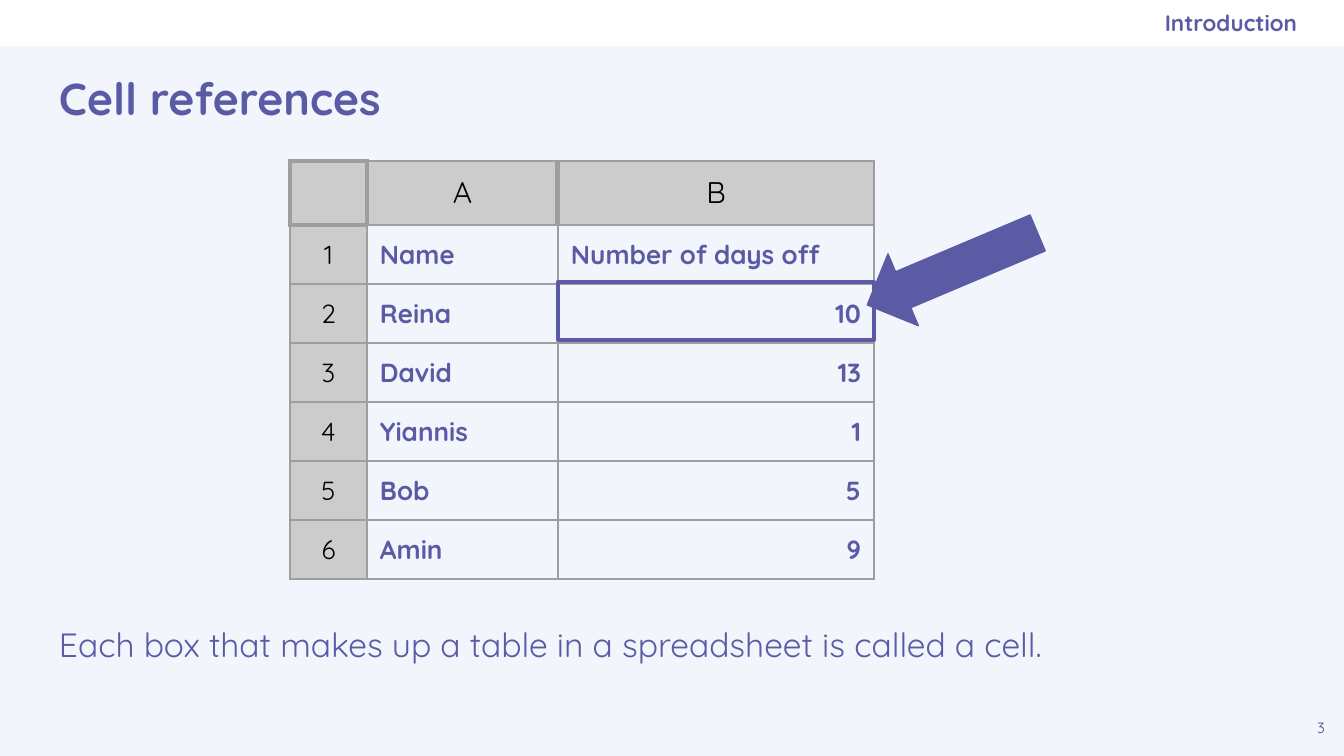
from lxml import etree
from pptx import Presentation
from pptx.dml.color import RGBColor
from pptx.enum import shapes, text
from pptx.oxml import ns
from pptx.util import Emu, Pt

PX = 914400 / 134.4
WIDTH, HEIGHT = 1344, 756

PURPLE = RGBColor(0x5B, 0x5B, 0xA5)
DARK_PURPLE = RGBColor(0x49, 0x49, 0x85)
PALE_BLUE = RGBColor(0xF2, 0xF6, 0xFC)
WHITE = RGBColor(0xFF, 0xFF, 0xFF)
BLACK = RGBColor(0, 0, 0)
HEADER_GREY = RGBColor(0xCC, 0xCC, 0xCC)
GRID_GREY = RGBColor(0x9E, 0x9E, 0x9E)

LEFT, CENTER, RIGHT = text.PP_ALIGN.LEFT, text.PP_ALIGN.CENTER, text.PP_ALIGN.RIGHT
TOP, MIDDLE = text.MSO_ANCHOR.TOP, text.MSO_ANCHOR.MIDDLE


def px(value):
    return Emu(round(value * PX))


class SlideBuilder:
    font = "Quicksand"
    inset = 13
    thin, thick = 0.75, 3

    def __init__(self, slide):
        self.slide = slide

    def background(self, color):
        fill = self.slide.background.fill
        fill.solid()
        fill.fore_color.rgb = color

    def style(self, paragraph, size, color, bold=False, align=LEFT):
        paragraph.alignment = align
        for run in paragraph.runs:
            run.font.name = self.font
            run.font.size = Pt(size)
            run.font.bold = bold
            run.font.color.rgb = color

    def margins(self, holder, inset, right=None):
        holder.margin_left = holder.margin_top = holder.margin_bottom = px(inset)
        holder.margin_right = px(inset if right is None else right)

    def label(self, box, words, size, color=PURPLE, bold=False, align=LEFT,
              anchor=TOP, right=None):
        frame = self.slide.shapes.add_textbox(*map(px, box)).text_frame
        frame.word_wrap = True
        frame.vertical_anchor = anchor
        self.margins(frame, self.inset, right)
        frame.text = words
        paragraph = frame.paragraphs[0]
        self.style(paragraph, size, color, bold, align)
        return paragraph

    def shape(self, kind, box, fill=None, line=None, line_width=0.75, rotation=0):
        shape = self.slide.shapes.add_shape(kind, *map(px, box))
        shape.shadow.inherit = False
        shape.rotation = rotation
        if fill is None:
            shape.fill.background()
        else:
            shape.fill.solid()
            shape.fill.fore_color.rgb = fill
        if line is None:
            shape.line.fill.background()
        else:
            shape.line.color.rgb = line
            shape.line.width = Pt(line_width)

    def table(self, left, top, columns, heights):
        box = (left, top, sum(columns), sum(heights))
        table = self.slide.shapes.add_table(len(heights), len(columns), *map(px, box)).table
        table.first_row = table.horz_banding = False
        for column, width in zip(table.columns, columns):
            column.width = px(width)
        for row, height in zip(table.rows, heights):
            row.height = px(height)
        return table

    def cell(self, cell, words, size, color, bold, align, fill=None, thick_sides=""):
        # Borders come before the fill in the cell properties
        properties = cell._tc.get_or_add_tcPr()
        for side in "LRTB":
            width = self.thick if side in thick_sides else self.thin
            border = etree.SubElement(properties, ns.qn(f"a:ln{side}"), w=str(Pt(width)))
            solid = etree.SubElement(border, ns.qn("a:solidFill"))
            etree.SubElement(solid, ns.qn("a:srgbClr"), val=str(GRID_GREY))
        if fill is None:
            cell.fill.background()
        else:
            cell.fill.solid()
            cell.fill.fore_color.rgb = fill
        if words:
            self.margins(cell, self.inset)
            cell.text = words
            self.style(cell.text_frame.paragraphs[0], size, color, bold, align)
        else:
            self.margins(cell, 0)


def main():
    deck = Presentation()
    deck.slide_width, deck.slide_height = px(WIDTH), px(HEIGHT)
    page = SlideBuilder(deck.slides.add_slide(deck.slide_layouts[6]))
    page.background(PALE_BLUE)

    # Top band
    page.shape(shapes.MSO_SHAPE.RECTANGLE, (0, 0, WIDTH, 46), fill=WHITE)

    # Spreadsheet
    days_off = [("Name", "Number of days off"), ("Reina", "10"), ("David", "13"),
                ("Yiannis", "1"), ("Bob", "5"), ("Amin", "9")]
    sheet = page.table(290, 161, [77, 191, 316], [64] + [59] * len(days_off))
    for column, (letter, thick) in enumerate([("", "LRTB"), ("A", "LR"), ("B", "L")]):
        page.cell(sheet.cell(0, column), letter, 16, BLACK, False, CENTER, HEADER_GREY, thick)
    for row, (name, days) in enumerate(days_off, start=1):
        page.cell(sheet.cell(row, 0), str(row), 14, BLACK, False, CENTER, HEADER_GREY,
                  "T" if row == 1 else "")
        page.cell(sheet.cell(row, 1), name, 14, PURPLE, True, LEFT)
        page.cell(sheet.cell(row, 2), days, 14, PURPLE, True, LEFT if row == 1 else RIGHT)

    # Title, page number and section name
    page.label((46, 47, 1252, 102), "Cell references", 24, bold=True, anchor=MIDDLE)
    page.label((1298, 710, 46, 46), "3", 8, DARK_PURPLE, align=CENTER)
    page.label((773, 0, 524, 46), "Introduction", 12, bold=True, align=RIGHT,
               anchor=MIDDLE, right=0)

    # Highlighted cell and its arrow
    page.shape(shapes.MSO_SHAPE.RECTANGLE, (558, 282, 316, 58), line=PURPLE, line_width=2.25)
    page.shape(shapes.MSO_SHAPE.LEFT_ARROW, (860, 230, 185, 78), fill=PURPLE, line=PURPLE,
               rotation=337.1)

    # Explanation
    explanation = page.label(
        (46, 605, 1252, 102),
        "Each box that makes up a table in a spreadsheet is called a cell.", 18)
    explanation.line_spacing = 1.15
    explanation.space_after = Pt(16)

    deck.save("out.pptx")


if __name__ == "__main__":
    main()
